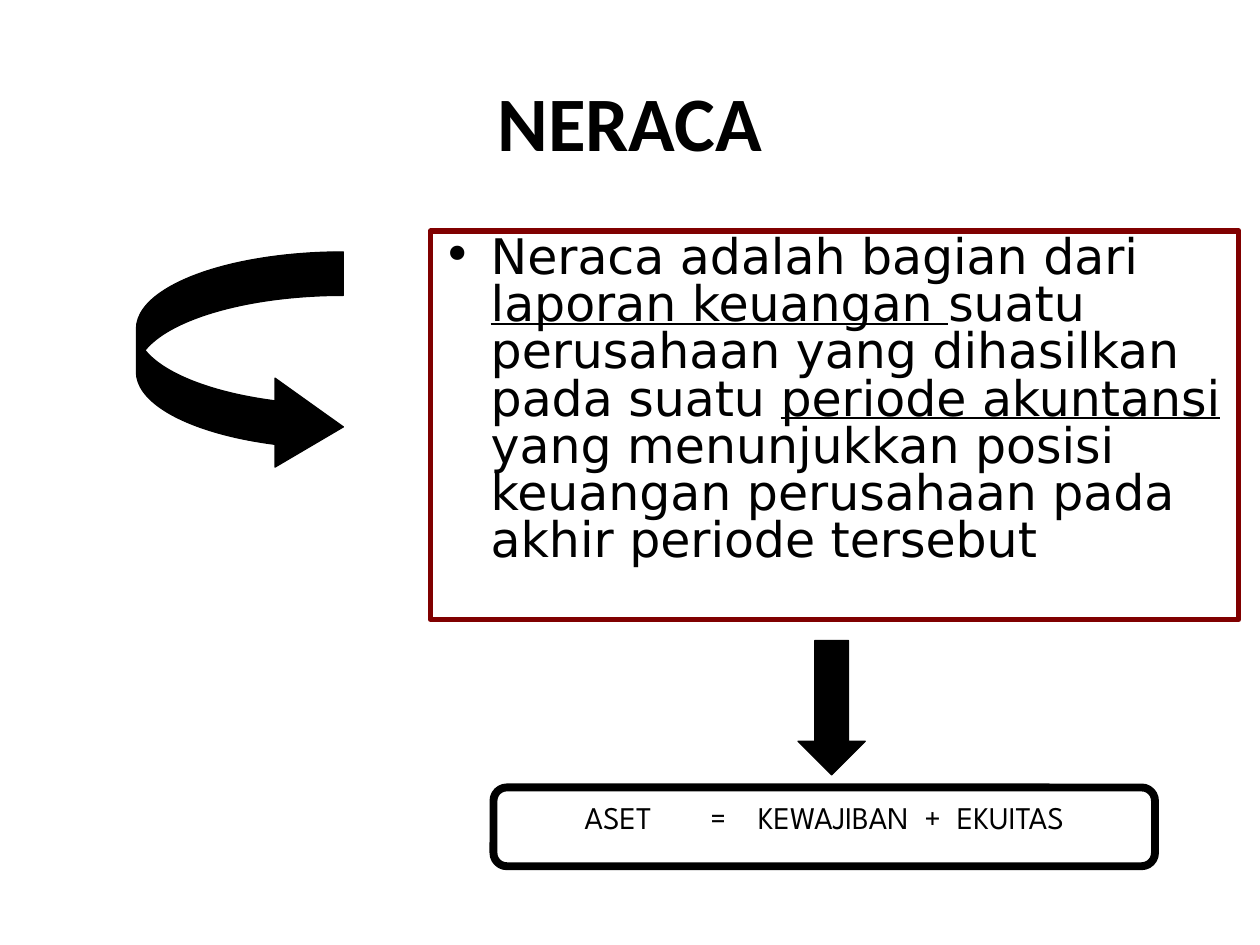
from lxml import etree
from pptx import Presentation
from pptx import util as u
from pptx.dml.color import RGBColor
from pptx.enum import shapes, text
from pptx.oxml.ns import qn

BLACK = RGBColor(0x00, 0x00, 0x00)
WHITE = RGBColor(0xFF, 0xFF, 0xFF)
MAROON = RGBColor(0x80, 0x00, 0x00)
COLUMNS, ROWS = 120, 90


class BalanceSlide:
    def __init__(self, presentation):
        self.cell_width = presentation.slide_width / COLUMNS
        self.cell_height = presentation.slide_height / ROWS
        self.slide = presentation.slides.add_slide(presentation.slide_layouts[6])

    def place(self, column, row, width, height):
        return (
            round(column * self.cell_width),
            round(row * self.cell_height),
            round(width * self.cell_width),
            round(height * self.cell_height),
        )

    def title(self, area, wording):
        shape = self.slide.shapes.add_textbox(*self.place(*area))
        paragraph = self.start_text(shape, text.MSO_ANCHOR.MIDDLE)
        paragraph.alignment = text.PP_ALIGN.CENTER
        self.run(paragraph, wording, name="Calibri", size=u.Pt(44), bold=True)

    def shape(self, kind, area, fill=BLACK, line=BLACK, weight=0.75, adjustments=()):
        shape = self.slide.shapes.add_shape(kind, *self.place(*area))
        shape.shadow.inherit = False
        shape.fill.solid()
        shape.fill.fore_color.rgb = fill
        shape.line.color.rgb = line
        shape.line.width = u.Pt(weight)
        for index, value in enumerate(adjustments):
            shape.adjustments[index] = value
        return shape

    def start_text(self, shape, anchor=text.MSO_ANCHOR.TOP):
        shape.text_frame.word_wrap = True
        shape.text_frame.vertical_anchor = anchor
        return shape.text_frame.paragraphs[0]

    def run(self, paragraph, wording, spacing=0, **formats):
        run = paragraph.add_run()
        run.text = wording
        run.font.color.rgb = BLACK
        for name, value in formats.items():
            setattr(run.font, name, value)
        if spacing:
            run._r.get_or_add_rPr().set("spc", str(round(spacing * 100)))

    def bullet(self, shape, parts):
        paragraph = self.start_text(shape)
        formats = {
            "alignment": text.PP_ALIGN.LEFT,
            "line_spacing": 0.8,
            "space_before": u.Pt(5.6),
        }
        for name, value in formats.items():
            setattr(paragraph, name, value)
        properties = paragraph._p.get_or_add_pPr()
        indent = u.Inches(0.38)
        properties.set("marL", str(indent))
        properties.set("indent", str(-indent))
        font = etree.SubElement(properties, qn("a:buFont"))
        font.set("typeface", "DejaVu Sans")
        etree.SubElement(properties, qn("a:buChar")).set("char", "•")
        for wording, underline in parts:
            self.run(paragraph, wording, name="DejaVu Sans", size=u.Pt(28), underline=underline)

    def equation(self, shape, parts):
        paragraph = self.start_text(shape)
        paragraph.alignment = text.PP_ALIGN.CENTER
        for wording, spacing in parts:
            self.run(paragraph, wording, spacing, name="League Spartan", size=u.Pt(18))


def main():
    presentation = Presentation()
    presentation.slide_width = u.Inches(10)
    presentation.slide_height = u.Inches(7.5)
    slide = BalanceSlide(presentation)
    kinds = shapes.MSO_SHAPE

    slide.title((9, 4, 102, 15), "NERACA")

    definition = slide.shape(kinds.RECTANGLE, (41, 22, 77, 37), WHITE, MAROON, 3)
    slide.bullet(definition, [
        ("Neraca adalah bagian dari ", False),
        ("laporan keuangan ", True),
        ("suatu perusahaan yang dihasilkan pada suatu ", False),
        ("periode akuntansi ", True),
        ("yang menunjukkan posisi keuangan perusahaan pada akhir periode tersebut", False),
    ])

    formula = slide.shape(
        kinds.ROUNDED_RECTANGLE, (47, 75, 63, 7.5), WHITE, BLACK, 4.5, [0.17]
    )
    slide.equation(formula, [
        ("ASET\t=", 0),
        (" ", 13.5),
        ("KEWAJIBAN", 0),
        (" ", 4.5),
        ("+", 0),
        (" ", 4.5),
        ("EKUITAS", 0),
    ])

    slide.shape(kinds.DOWN_ARROW, (76, 61, 6.4, 12.8), adjustments=[0.5, 0.5])
    slide.shape(
        kinds.CURVED_RIGHT_ARROW, (13, 24, 19.7, 20.9), adjustments=[0.21, 0.43, 0.33]
    )
    presentation.save("out.pptx")


if __name__ == "__main__":
    main()
